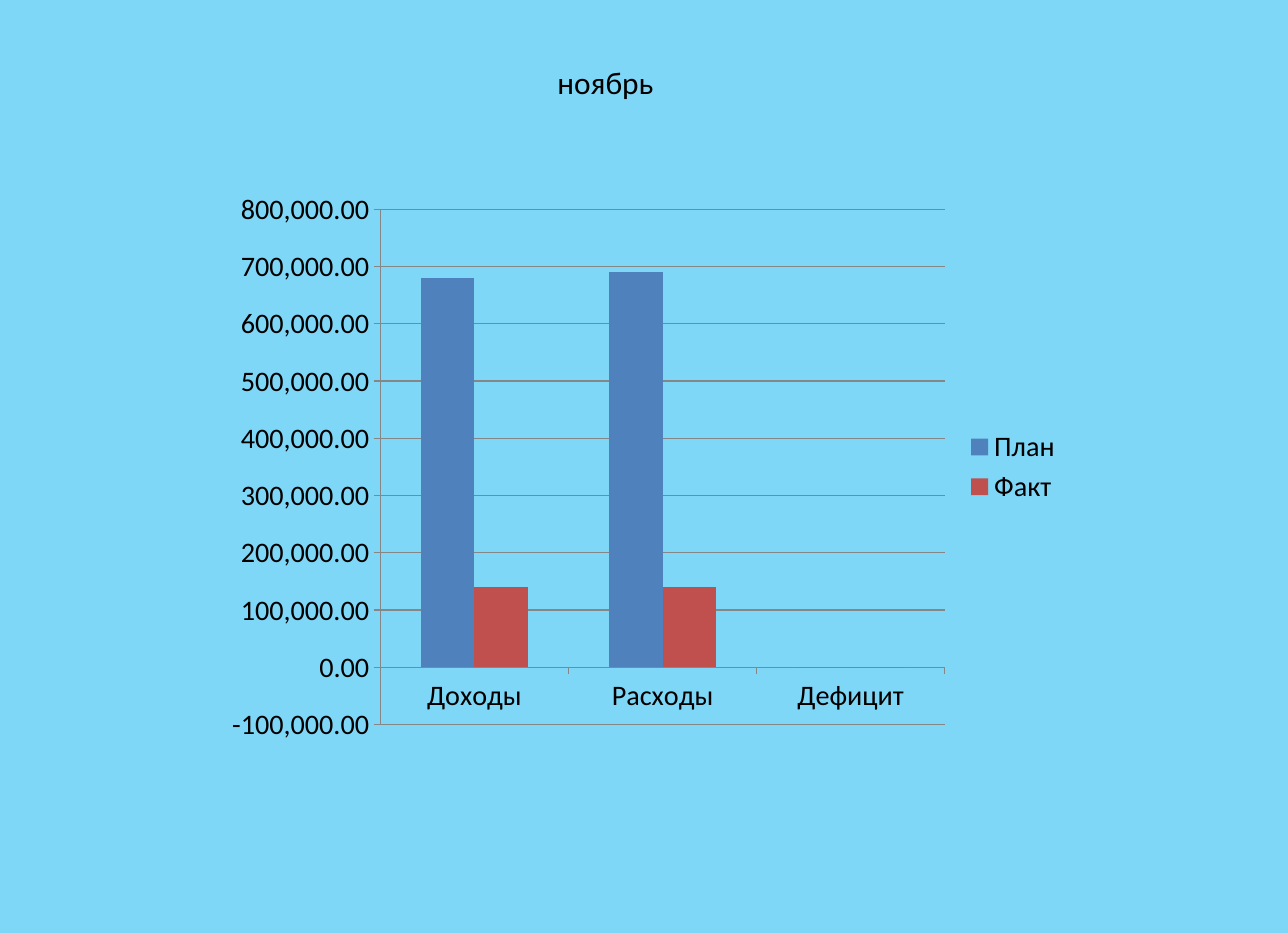
from dataclasses import dataclass

from pptx import Presentation
from pptx.chart.data import CategoryChartData
from pptx.dml.color import RGBColor
from pptx.enum.chart import XL_CHART_TYPE, XL_LEGEND_POSITION, XL_TICK_MARK
from pptx.enum.text import MSO_AUTO_SIZE
from pptx.util import Cm, Pt


@dataclass(frozen=True)
class Theme:
    font: str = "Calibri"
    background: RGBColor = RGBColor(0x7F, 0xD7, 0xF7)
    text: RGBColor = RGBColor(0, 0, 0)
    axis: RGBColor = RGBColor(0x86, 0x86, 0x86)
    plan: RGBColor = RGBColor(0x4F, 0x81, 0xBD)
    fact: RGBColor = RGBColor(0xC0, 0x50, 0x4D)
    month_size: Pt = Pt(20)
    chart_size: Pt = Pt(18)


THEME = Theme()
NUMBER_FORMAT = "#,##0.00"
BUDGET_ITEMS = ["Доходы", "Расходы", "Дефицит"]
BUDGET = [
    ("План", [680000, 690000, 0], THEME.plan),
    ("Факт", [140000, 140000, 0], THEME.fact),
]


def set_font(font, size):
    font.name = THEME.font
    font.size = size
    font.color.rgb = THEME.text


def add_month(slide, month):
    label = slide.shapes.add_textbox(Cm(12.3), Cm(1.3), Cm(2.69), Cm(1.12))
    frame = label.text_frame
    frame.word_wrap = False
    frame.auto_size = MSO_AUTO_SIZE.SHAPE_TO_FIT_TEXT
    frame.text = month
    set_font(frame.paragraphs[0].runs[0].font, THEME.month_size)


def style_axis(axis):
    axis.major_tick_mark = XL_TICK_MARK.OUTSIDE
    axis.minor_tick_mark = XL_TICK_MARK.NONE
    axis.format.line.color.rgb = THEME.axis
    axis.format.line.width = Pt(0.75)


def add_budget_chart(slide):
    budget_data = CategoryChartData(number_format=NUMBER_FORMAT)
    budget_data.categories = BUDGET_ITEMS
    for name, amounts, _ in BUDGET:
        budget_data.add_series(name, amounts)

    chart = slide.shapes.add_chart(
        XL_CHART_TYPE.COLUMN_CLUSTERED,
        Cm(4.84), Cm(4.07), Cm(19.33), Cm(12.88), budget_data,
    ).chart
    set_font(chart.font, THEME.chart_size)
    chart.has_title = False
    chart.has_legend = True
    chart.legend.position = XL_LEGEND_POSITION.RIGHT
    chart.legend.include_in_layout = False

    plot = chart.plots[0]
    plot.gap_width = 150
    plot.overlap = 0
    plot.vary_by_categories = False
    for series, (_, _, color) in zip(plot.series, BUDGET):
        series.invert_if_negative = False
        series.format.fill.solid()
        series.format.fill.fore_color.rgb = color

    amounts_axis = chart.value_axis
    for axis in (chart.category_axis, amounts_axis):
        style_axis(axis)
    amounts_axis.minimum_scale = -100000
    amounts_axis.maximum_scale = 800000
    amounts_axis.major_unit = 100000
    amounts_axis.tick_labels.number_format = NUMBER_FORMAT
    amounts_axis.tick_labels.number_format_is_linked = False
    amounts_axis.has_major_gridlines = True
    gridline = amounts_axis.major_gridlines.format.line
    gridline.color.rgb = THEME.axis
    gridline.width = Pt(0.75)


def main():
    presentation = Presentation()
    presentation.slide_width = Cm(29)
    presentation.slide_height = Cm(21)
    slide = presentation.slides.add_slide(presentation.slide_layouts[6])
    slide.background.fill.solid()
    slide.background.fill.fore_color.rgb = THEME.background
    add_month(slide, "ноябрь")
    add_budget_chart(slide)
    presentation.save("out.pptx")


if __name__ == "__main__":
    main()
